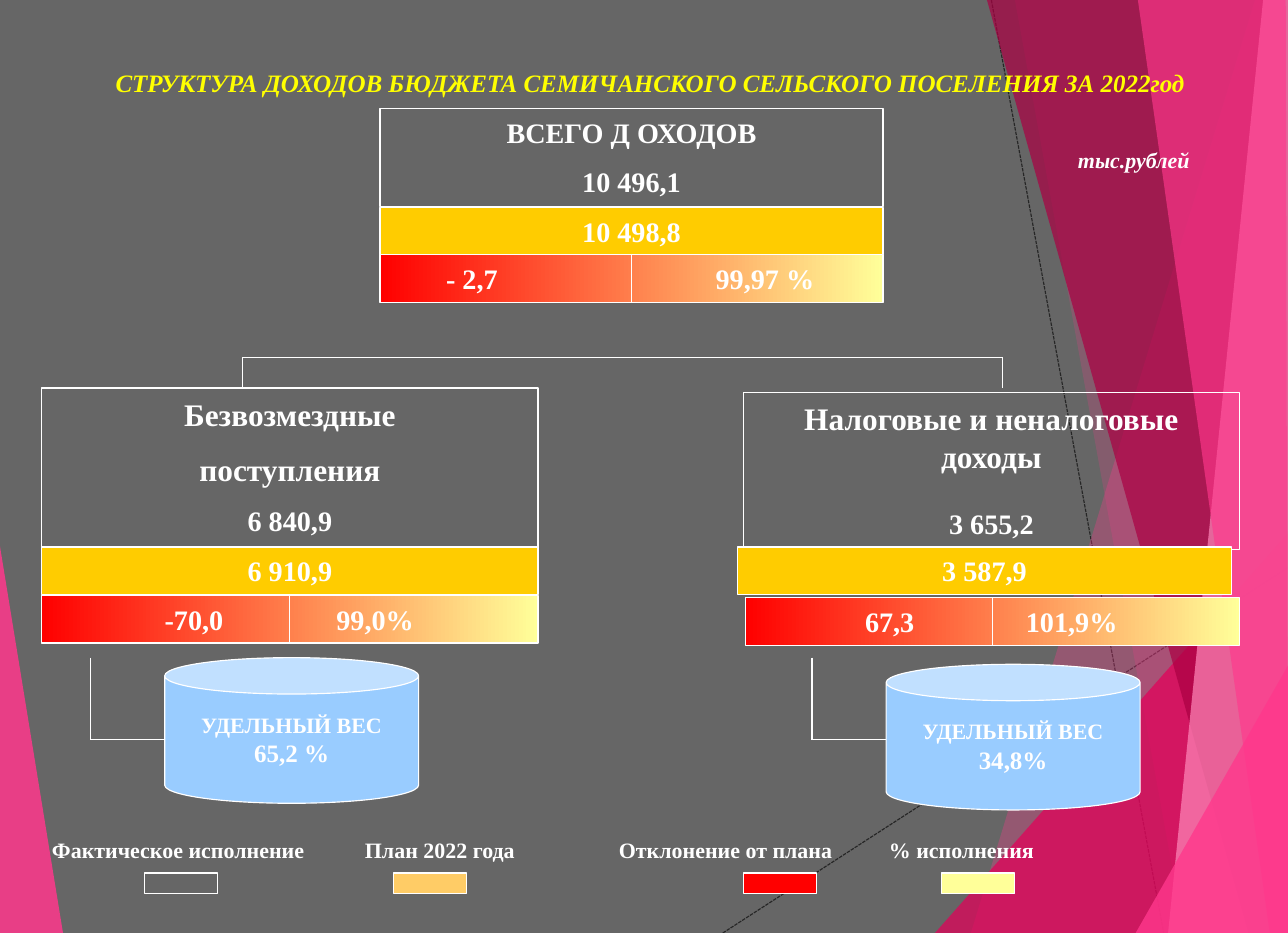
from dataclasses import dataclass

from lxml import etree
from pptx import Presentation
from pptx import util as u
from pptx.dml.color import RGBColor
from pptx.enum import dml, shapes, text
from pptx.oxml.ns import qn

COLORS = {
    "background": "666666", "white": "FFFFFF", "title": "FFFF00",
    "plan": "FFCC00", "plan_key": "FFCC66", "deviation": "FF0000",
    "percent": "FFFF99", "share": "99CCFF", "dash": "262626",
    "pink": "FF388C", "crimson": "E40059", "wine": "AB0043", "rose": "FF88BA",
}
SLIDE_W, SLIDE_H = 29.01, 21.01
FONT = "Times New Roman"
BAR_H = 1.07
CAN_W, CAN_H = 5.72, 3.28
KEY_TOP, KEY_W, KEY_H = 19.66, 1.65, 0.46


@dataclass(frozen=True)
class Box:
    left: float
    top: float
    width: float
    height: float

    def lengths(self) -> list[u.Length]:
        return [u.Cm(v) for v in (self.left, self.top, self.width, self.height)]


@dataclass(frozen=True)
class Line:
    text: str
    size: int = 18
    before: float = 10
    color: str = "white"
    italic: bool = False
    align: text.PP_ALIGN = text.PP_ALIGN.CENTER
    tabs: tuple[float, ...] = ()
    tab_align: str = "ctr"


@dataclass(frozen=True)
class Facet:
    color: str
    alpha: int
    points: tuple[tuple[float, float], ...]


@dataclass(frozen=True)
class Income:
    actual_box: Box
    actual: tuple[Line, ...]
    plan_box: Box
    plan: str
    result_box: Box
    result: tuple[str, str]
    result_tabs: tuple[float, float]


@dataclass(frozen=True)
class Share:
    left: float
    top: float
    percent: str
    branch_x: float


@dataclass(frozen=True)
class Key:
    label: str
    label_x: float
    swatch_x: float
    color: str | None


FACETS = (
    Facet("pink", 85, ((0, 12.3), (1.42, SLIDE_H), (0, SLIDE_H))),
    Facet("pink", 30, ((28.27, 0), (21.87, SLIDE_H), (SLIDE_W, SLIDE_H), (SLIDE_W, 0))),
    Facet("pink", 20, ((22.86, 0), (26.67, SLIDE_H), (SLIDE_W, SLIDE_H), (SLIDE_W, 0))),
    Facet("crimson", 72, ((21.06, SLIDE_H), (SLIDE_W, 12.01), (SLIDE_W, SLIDE_H))),
    Facet("wine", 70, ((22.23, 0), (28.12, SLIDE_H), (SLIDE_W, SLIDE_H), (SLIDE_W, 0))),
    Facet("rose", 70, ((28.45, 0), (26.31, SLIDE_H), (SLIDE_W, SLIDE_H), (SLIDE_W, 0))),
    Facet("pink", 65, ((25.63, 0), (28.6, SLIDE_H), (SLIDE_W, SLIDE_H), (28.96, 0))),
    Facet("pink", 80, ((25.58, SLIDE_H), (SLIDE_W, 14.99), (SLIDE_W, SLIDE_H))),
)
INCOMES = (
    Income(Box(8.56, 2.44, 11.33, 2.21), (Line("ВСЕГО Д ОХОДОВ"), Line("10 496,1")),
           Box(8.56, 4.67, 11.33, BAR_H), "10 498,8",
           Box(8.56, 5.74, 11.33, BAR_H), ("- 2,7", "99,97 %"), (1.79, 8.39)),
    Income(Box(0.94, 8.74, 11.18, 3.58),
           (Line("Безвозмездные", 20), Line("поступления", 20, 11.5), Line("6 840,9")),
           Box(0.94, 12.32, 11.18, BAR_H), "6 910,9",
           Box(0.94, 13.41, 11.18, BAR_H), ("-70,0", "99,0%"), (3.15, 7.23)),
    Income(Box(16.74, 8.84, 11.18, 3.53),
           (Line("Налоговые и неналоговые доходы", 20), Line("3 655,2", before=20.5)),
           Box(16.61, 12.32, 11.13, BAR_H), "3 587,9",
           Box(16.79, 13.46, 11.13, BAR_H), ("67,3", "101,9%"), (2.97, 7.07)),
)
SHARES = (Share(3.71, 14.81, "65,2 %", 2.03), Share(19.96, 14.96, "34,8%", 18.29))
KEYS = (
    Key("Фактическое исполнение", 0.48, 3.25, None),
    Key("План 2022 года", 7.53, 8.86, "plan_key"),
    Key("Отклонение от плана", 13.25, 16.74, "deviation"),
    Key("% исполнения", 19.33, 21.21, "percent"),
)


def rgb(name: str) -> RGBColor:
    return RGBColor.from_string(COLORS[name])


def write(holder, lines: tuple[Line, ...], middle: bool = False) -> None:
    frame = holder.text_frame
    frame.word_wrap = not middle
    frame.vertical_anchor = text.MSO_ANCHOR.MIDDLE if middle else text.MSO_ANCHOR.TOP
    frame.margin_left = frame.margin_right = u.Cm(0.28)
    frame.margin_top = frame.margin_bottom = u.Cm(0.15)
    for index, line in enumerate(lines):
        paragraph = frame.add_paragraph() if index else frame.paragraphs[0]
        paragraph.text = line.text
        paragraph.alignment = line.align
        paragraph.space_before = u.Pt(line.before if index else 0)
        if line.tabs:
            stops = etree.SubElement(paragraph._p.get_or_add_pPr(), qn("a:tabLst"))
            for stop in line.tabs:
                etree.SubElement(stops, qn("a:tab"), pos=str(u.Cm(stop)), algn=line.tab_align)
        font = paragraph.font
        font.name, font.size, font.bold = FONT, u.Pt(line.size), True
        font.italic = line.italic
        font.color.rgb = rgb(line.color)


def add_label(slide, box: Box, line: Line) -> None:
    write(slide.shapes.add_textbox(*box.lengths()), (line,))


def add_panel(slide, box: Box, fill: str | None, kind=shapes.MSO_SHAPE.RECTANGLE):
    panel = slide.shapes.add_shape(kind, *box.lengths())
    panel.shadow.inherit = False
    if fill:
        panel.fill.solid()
        panel.fill.fore_color.rgb = rgb(fill)
    else:
        panel.fill.background()
    panel.line.color.rgb = rgb("white")
    panel.line.width = u.Pt(0.75)
    return panel


def add_rule(slide, x1: float, y1: float, x2: float, y2: float, color: str = "white"):
    rule = slide.shapes.add_connector(
        shapes.MSO_CONNECTOR.STRAIGHT, *(u.Cm(v) for v in (x1, y1, x2, y2)))
    rule.line.color.rgb = rgb(color)
    rule.line.width = u.Pt(0.75)
    etree.SubElement(rule._element.spPr, qn("a:effectLst"))
    return rule


def add_facet(slide, facet: Facet) -> None:
    first, *rest = [(u.Cm(x), u.Cm(y)) for x, y in facet.points]
    builder = slide.shapes.build_freeform(*first)
    builder.add_line_segments(rest)
    shard = builder.convert_to_shape()
    shard.shadow.inherit = False
    shard.line.fill.background()
    shard.fill.solid()
    shard.fill.fore_color.rgb = rgb(facet.color)
    tint = shard._element.spPr.find(qn("a:solidFill"))[0]
    etree.SubElement(tint, qn("a:alpha"), val=str(facet.alpha * 1000))


def add_income(slide, income: Income) -> None:
    write(add_panel(slide, income.actual_box, None), income.actual)
    write(add_panel(slide, income.plan_box, "plan"), (Line(income.plan),))
    box = income.result_box
    result = add_panel(slide, box, None)
    result.fill.gradient()
    result.fill.gradient_angle = 0
    for stop, color in zip(result.fill.gradient_stops, ("deviation", "percent")):
        stop.color.rgb = rgb(color)
    write(result, (Line("\t" + "\t".join(income.result), align=text.PP_ALIGN.LEFT,
                        tabs=income.result_tabs),))
    center = box.left + box.width / 2
    divider = add_rule(slide, center, box.top, center, box.top + box.height)
    divider.begin_connect(result, 0)
    divider.end_connect(result, 2)


def add_share(slide, share: Share) -> None:
    can = add_panel(slide, Box(share.left, share.top, CAN_W, CAN_H), "share",
                    shapes.MSO_SHAPE.CAN)
    write(can, (Line("УДЕЛЬНЫЙ ВЕС", 14), Line(share.percent, 16, 0)), middle=True)
    add_rule(slide, share.branch_x, 14.81, share.branch_x, 16.66)
    add_rule(slide, share.branch_x, 16.66, share.left, 16.66)


def main() -> None:
    deck = Presentation()
    deck.slide_width, deck.slide_height = u.Cm(SLIDE_W), u.Cm(SLIDE_H)
    slide = deck.slides.add_slide(deck.slide_layouts[6])
    slide.background.fill.solid()
    slide.background.fill.fore_color.rgb = rgb("background")

    for ends in ((16.28, SLIDE_H, SLIDE_W, 12.78), (22.33, 0, 26.21, SLIDE_H)):
        add_rule(slide, *ends, "dash").line.dash_style = dml.MSO_LINE.SQUARE_DOT
    for facet in FACETS:
        add_facet(slide, facet)

    add_label(slide, Box(1.57, 1.37, 26.16, 0.97), Line(
        "СТРУКТУРА ДОХОДОВ БЮДЖЕТА СЕМИЧАНСКОГО СЕЛЬСКОГО ПОСЕЛЕНИЯ ЗА 2022год",
        16, color="title", italic=True))
    add_label(slide, Box(24, 3.15, 3.73, 0.89),
              Line("тыс.рублей", 14, italic=True, align=text.PP_ALIGN.LEFT))

    for ends in ((5.46, 8.05, 22.58, 8.05), (5.46, 8.05, 5.46, 8.74),
                 (22.58, 8.05, 22.58, 8.74)):
        add_rule(slide, *ends)
    for income in INCOMES:
        add_income(slide, income)
    for share in SHARES:
        add_share(slide, share)

    add_label(slide, Box(0.41, 18.69, 27.23, 0.89), Line(
        "\t" + "\t".join(key.label for key in KEYS), 14, align=text.PP_ALIGN.LEFT,
        tabs=tuple(key.label_x for key in KEYS), tab_align="l"))
    for key in KEYS:
        add_panel(slide, Box(key.swatch_x, KEY_TOP, KEY_W, KEY_H), key.color)

    deck.save("out.pptx")


if __name__ == "__main__":
    main()
